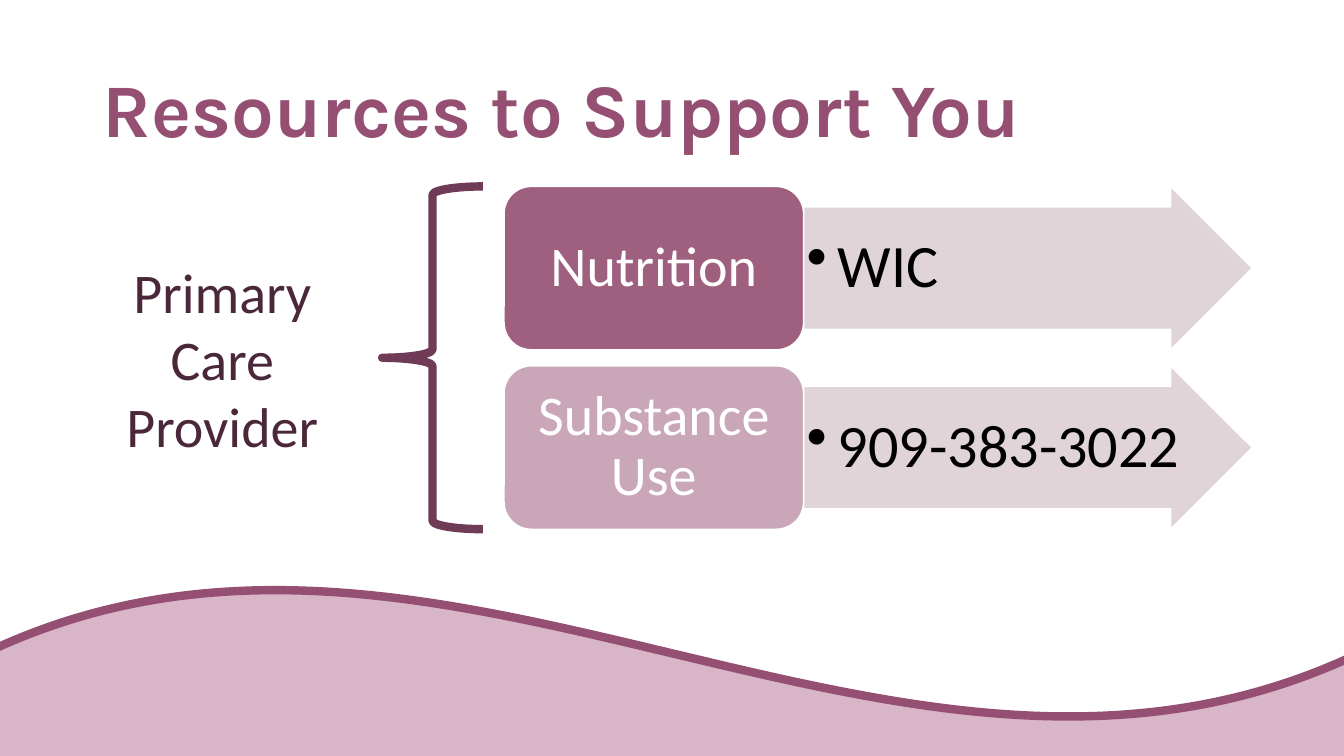
from lxml import etree
from pptx import Presentation
from pptx.dml.color import RGBColor
from pptx.enum.shapes import MSO_SHAPE
from pptx.enum.text import MSO_ANCHOR, MSO_AUTO_SIZE, PP_ALIGN
from pptx.oxml.ns import qn
from pptx.util import Inches, Pt

WAVE, ARROW = MSO_SHAPE.WAVE, MSO_SHAPE.RIGHT_ARROW
ROUNDED, BRACE = MSO_SHAPE.ROUNDED_RECTANGLE, MSO_SHAPE.LEFT_BRACE
LEFT, CENTER = PP_ALIGN.LEFT, PP_ALIGN.CENTER
MIDDLE, NO_FIT = MSO_ANCHOR.MIDDLE, MSO_AUTO_SIZE.NONE

PLUM = RGBColor(0x95, 0x4F, 0x72)
DARK_PLUM = RGBColor(0x70, 0x3B, 0x56)
DEEP_PLUM = RGBColor(0x4A, 0x28, 0x39)
PINK = RGBColor(0xD8, 0xB5, 0xC7)
PALE = RGBColor(0xDD, 0xD0, 0xD5)
WHITE = RGBColor(0xFF, 0xFF, 0xFF)
BLACK = RGBColor(0, 0, 0)


def add_figure(kind, left, top, width, height, line, weight, fill=None, opacity=100):
    figure = slide.shapes.add_shape(
        kind, Inches(left), Inches(top), Inches(width), Inches(height))
    figure.shadow.inherit = False
    figure.line.color.rgb = line
    figure.line.width = Pt(weight)
    if fill is None:
        figure.fill.background()
        return figure
    figure.fill.solid()
    figure.fill.fore_color.rgb = fill
    if opacity < 100:
        color = figure.fill._xPr.find(qn("a:solidFill"))[0]
        etree.SubElement(color, qn("a:alpha"), val=str(opacity * 1000))
    return figure


def write(shape, text, size, color, font="Calibri", bold=False, align=CENTER,
          spacing=0.9, margins=(0.1, 0.05), bullet_indent=None):
    frame = shape.text_frame
    frame.text = text
    frame.word_wrap = True
    frame.auto_size = NO_FIT
    frame.vertical_anchor = MIDDLE
    frame.margin_left = frame.margin_right = Inches(margins[0])
    frame.margin_top = frame.margin_bottom = Inches(margins[1])
    paragraph = frame.paragraphs[0]
    paragraph.alignment = align
    paragraph.line_spacing = spacing
    if bullet_indent:
        properties = paragraph._p.get_or_add_pPr()
        properties.set("marL", str(Inches(bullet_indent)))
        properties.set("indent", str(-Inches(bullet_indent)))
        etree.SubElement(properties, qn("a:buChar"), char="•")
    run_font = paragraph.runs[0].font
    run_font.name = font
    run_font.size = Pt(size)
    run_font.bold = bold
    run_font.color.rgb = color


prs = Presentation()
prs.slide_width, prs.slide_height = Inches(13.33), Inches(7.5)
slide = prs.slides.add_slide(prs.slide_layouts[5])

add_figure(WAVE, -0.15, 5.83, 13.63, 5.21, PLUM, 6, PINK)

title = slide.shapes.title
title.left, title.top = Inches(0.92), Inches(0.4)
title.width, title.height = Inches(11.5), Inches(1.45)
write(title, "Resources to Support You", 54, PLUM, font="Karla", bold=True, align=LEFT)

ROW_TOP, ROW_HEIGHT, ROW_STEP = 1.85, 1.62, 1.78
TOPIC_LEFT, TOPIC_WIDTH, CONTACT_WIDTH = 5, 2.97, 4.45
resources = [("Nutrition", "WIC", 90), ("Substance Use", "909-383-3022", 50)]

for row, (topic, contact, opacity) in enumerate(resources):
    top = ROW_TOP + row * ROW_STEP
    contact_arrow = add_figure(ARROW, TOPIC_LEFT + TOPIC_WIDTH, top, CONTACT_WIDTH,
                               ROW_HEIGHT, WHITE, 1, PALE, 90)
    contact_arrow.adjustments[0] = 0.75
    write(contact_arrow, contact, 43, BLACK, align=LEFT, margins=(0.03, 0.03),
          bullet_indent=0.31)
    topic_box = add_figure(ROUNDED, TOPIC_LEFT, top, TOPIC_WIDTH, ROW_HEIGHT,
                           WHITE, 1, PLUM, opacity)
    write(topic_box, topic, 40, WHITE, margins=(0.17, 0.08))

add_figure(BRACE, 3.79, ROW_TOP, 1, ROW_STEP + ROW_HEIGHT, DARK_PLUM, 6)

provider = slide.shapes.add_textbox(Inches(0.69), Inches(1.97), Inches(3.03), Inches(3.16))
write(provider, "Primary Care Provider", 40, DEEP_PLUM, spacing=1.0)

prs.save("out.pptx")
